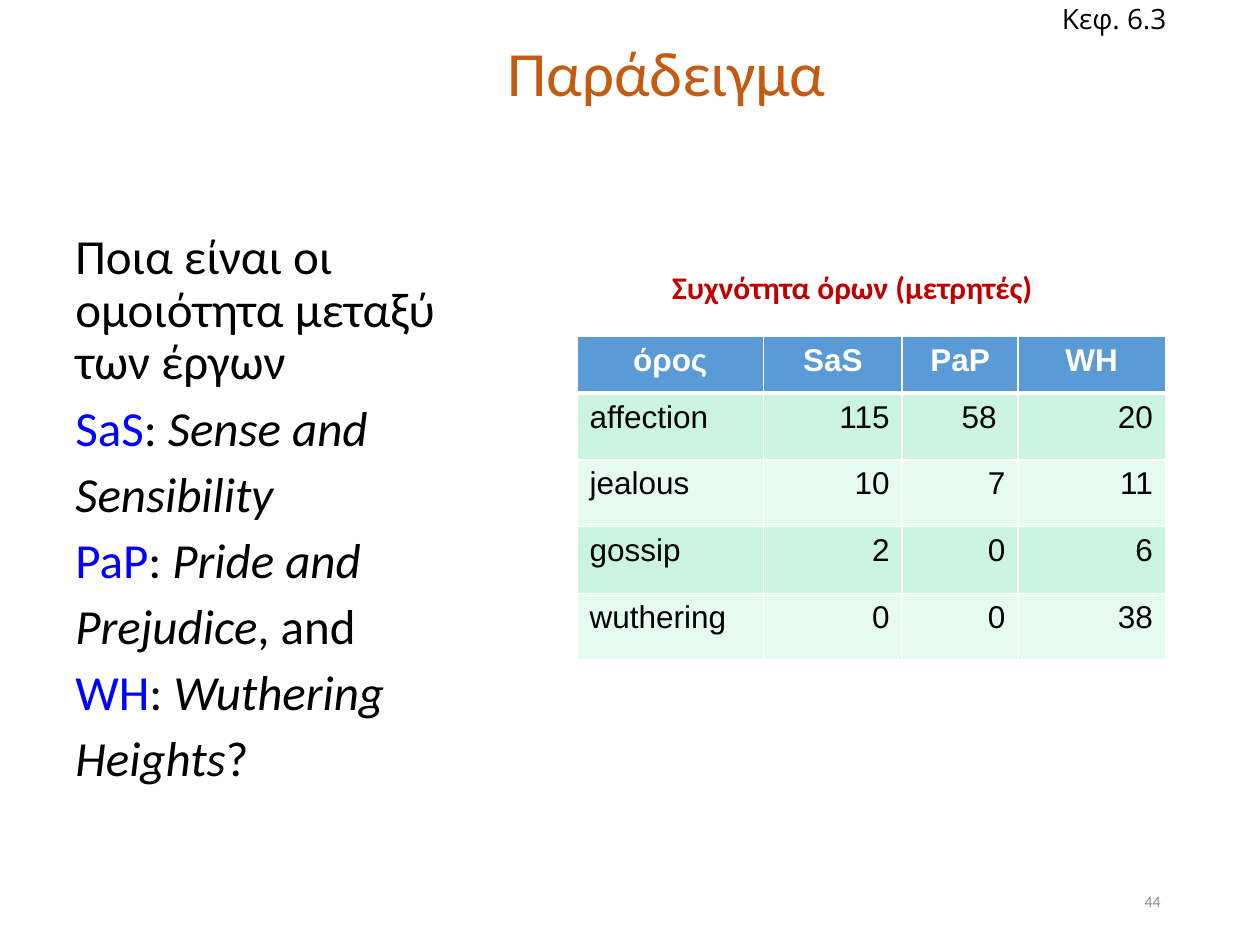
from lxml import etree
from pptx import Presentation
from pptx.dml.color import RGBColor
from pptx.enum import text as t
from pptx.oxml.ns import qn
from pptx.util import Inches, Pt

LEFT, MID, RIGHT = t.PP_ALIGN.LEFT, t.PP_ALIGN.CENTER, t.PP_ALIGN.RIGHT
TOP, CENTER, BASE = t.MSO_ANCHOR.TOP, t.MSO_ANCHOR.MIDDLE, t.MSO_ANCHOR.BOTTOM


def style(font, size, color, name="Calibri", bold=False):
    font.size, font.name, font.bold = Pt(size), name, bold
    font.color.rgb = RGBColor.from_string(color)


def add_text(box, words, size, color, align=LEFT, anchor=TOP, name="Calibri", bold=False):
    frame = slide.shapes.add_textbox(*map(Inches, box)).text_frame
    frame.word_wrap = True
    frame.vertical_anchor = anchor
    for i, line in enumerate(words):
        para = frame.paragraphs[0] if i == 0 else frame.add_paragraph()
        para.alignment = align
        style(para.font, size, color, name, bold)
        for part in line:
            para.add_run().text = part
    return frame


prs = Presentation()
prs.slide_width, prs.slide_height = Inches(10), Inches(7.5)
slide = prs.slides.add_slide(prs.slide_layouts[6])

# Title
title = add_text((0.58, 0.3, 9.42, 0.62), [["Παράδειγμα"]], 36, "C55A11", MID, BASE)
title.paragraphs[0].line_spacing = 0.9

# Term count table
rows = [
    ("όρος", "SaS", "PaP", "WH"),
    ("affection", "115", "58 ", "20"),
    ("jealous", "10", "7", "11"),
    ("gossip", "2", "0", "6"),
    ("wuthering", "0", "0", "38"),
]
table = slide.shapes.add_table(5, 4, *map(Inches, (4.58, 2.67, 4.67, 2.58))).table
for col, width in zip(table.columns, (1.48, 1.1, 0.92, 1.17)):
    col.width = Inches(width)
for r, row in enumerate(rows):
    table.rows[r].height = Inches(0.53 if r else 0.45)
    for c, value in enumerate(row):
        cell = table.cell(r, c)
        cell.text = value
        para = cell.text_frame.paragraphs[0]
        para.alignment = MID if r == 0 else RIGHT if c else LEFT
        style(para.font, 18, "000000" if r else "FFFFFF", "Arial", r == 0)

        # White borders, thicker under the header
        props = cell._tc.get_or_add_tcPr()
        for side in ("lnL", "lnR", "lnT", "lnB"):
            thick = (r, side) in ((0, "lnB"), (1, "lnT"))
            line = etree.SubElement(props, qn("a:" + side), w=str(Pt(3 if thick else 1)))
            fill = etree.SubElement(line, qn("a:solidFill"))
            etree.SubElement(fill, qn("a:srgbClr"), val="FFFFFF")
        cell.fill.solid()
        shade = "5B9BD5" if r == 0 else "CBF5E1" if r % 2 else "E7FAF1"
        cell.fill.fore_color.rgb = RGBColor.from_string(shade)

# Question and works: short names blue, book titles italic
lines = [
    ["Ποια είναι οι ομοιότητα μεταξύ των έργων"],
    ["SaS", ": ", "Sense and"],
    ["Sensibility"],
    ["PaP", ": ", "Pride and"],
    ["Prejudice", ", and"],
    ["WH", ": ", "Wuthering"],
    ["Heights", "?"],
]
books = ("Sense and", "Sensibility", "Pride and", "Prejudice", "Wuthering", "Heights")
body = add_text((0.5, 1.79, 3.29, 5.13), lines, 28, "000000")
for para in body.paragraphs:
    para.line_spacing, para.space_before = 0.9, Pt(7.5)
    for run in para.runs:
        if run.text in rows[0]:
            run.font.color.rgb = RGBColor.from_string("0000FF")
        elif run.text in books:
            run.font.italic = True

# Page number, table caption and chapter mark
add_text((7.06, 6.95, 2.25, 0.4), [["44"]], 9, "8C8C8C", RIGHT, CENTER)
add_text((4.1, 2.08, 5.33, 0.4), [["Συχνότητα όρων (μετρητές)"]], 18, "C00000", MID, bold=True)
mark = add_text((8.33, -0.04, 1.1, 0.37), [["Κεφ. 6.3"]], 16, "000000", LEFT, CENTER, "Open Sans")
mark.word_wrap = False

prs.save("out.pptx")
